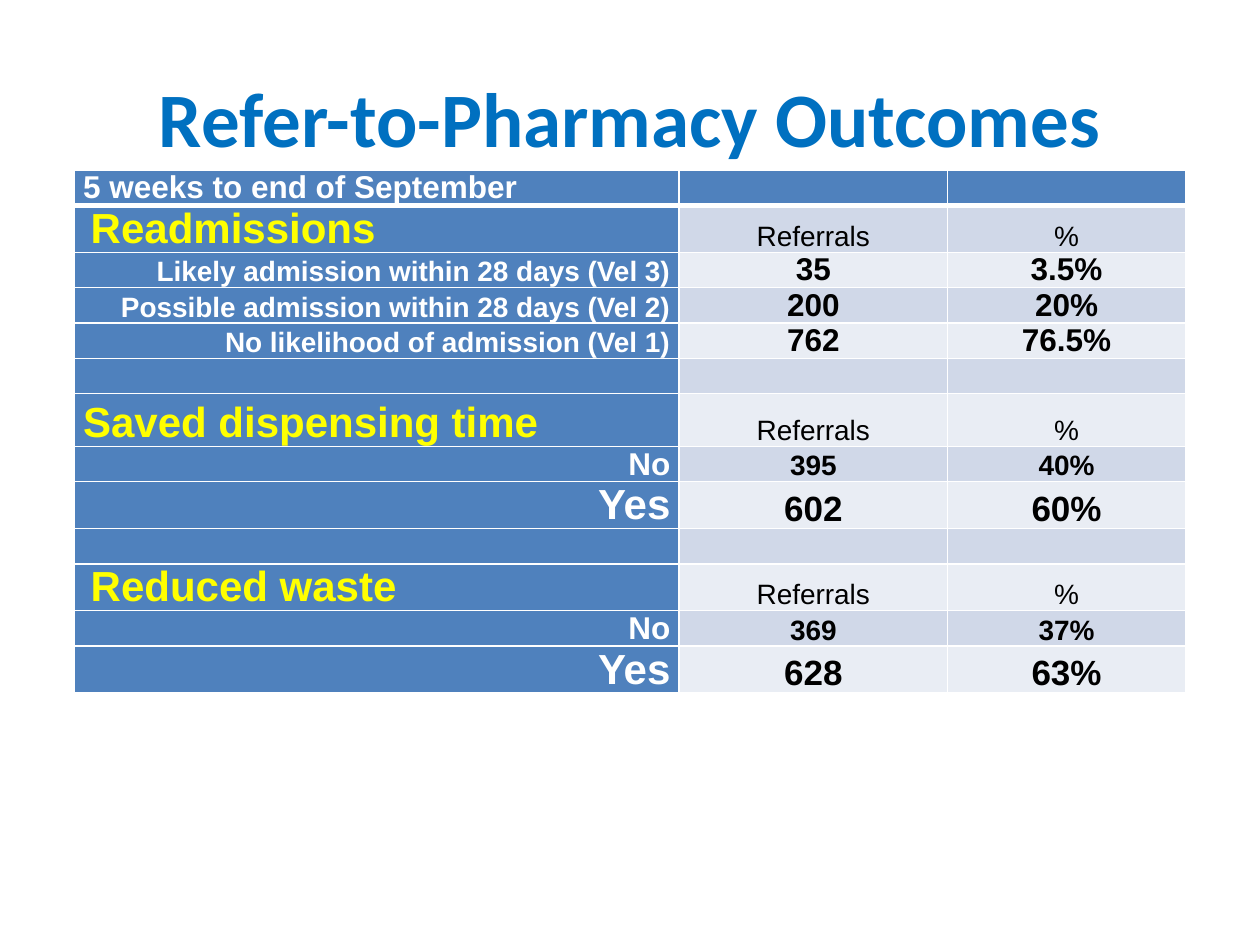
import lxml.etree
import pptx
import pptx.util
import pptx.dml.color
import pptx.enum.text
import pptx.oxml.ns

Inches = pptx.util.Inches
Pt = pptx.util.Pt
RGBColor = pptx.dml.color.RGBColor
ALIGN = pptx.enum.text.PP_ALIGN
ANCHOR = pptx.enum.text.MSO_ANCHOR
qn = pptx.oxml.ns.qn

TITLE_BLUE = RGBColor(0x00, 0x70, 0xC0)
HEADER_BLUE = RGBColor(0x4F, 0x81, 0xBD)
BAND_DARK = RGBColor(0xD0, 0xD8, 0xE8)
BAND_LIGHT = RGBColor(0xE9, 0xED, 0xF4)
YELLOW = RGBColor(0xFF, 0xFF, 0x00)
WHITE = RGBColor(0xFF, 0xFF, 0xFF)
BLACK = RGBColor(0x00, 0x00, 0x00)

COLUMN_WIDTHS = [4.8, 2.13, 1.89]
ROW_HEIGHT = 0.28
TALL_ROW_HEIGHT = 0.42
SIDE_MARGIN = 0.07
HEADING_INDENT = 0.13

STYLES = {
    "period": (18, WHITE, ALIGN.LEFT, 18, True),
    "heading": (24, YELLOW, ALIGN.LEFT, 16, False),
    "risk": (16, WHITE, ALIGN.RIGHT, 18, True),
    "no": (18, WHITE, ALIGN.RIGHT, 16, True),
    "yes": (24, WHITE, ALIGN.RIGHT, 20, True),
    "gap": (16, WHITE, ALIGN.LEFT, 16, False),
}
ROWS = [
    ("period", "5 weeks to end of September", "", ""),
    ("heading", "Readmissions", "Referrals", "%"),
    ("risk", "Likely admission within 28 days (Vel 3)", "35", "3.5%"),
    ("risk", "Possible admission within 28 days (Vel 2)", "200", "20%"),
    ("risk", "No likelihood of admission (Vel 1)", "762", "76.5%"),
    ("gap", "", "", ""),
    ("heading", "Saved dispensing time", "Referrals", "%"),
    ("no", "No", "395", "40%"),
    ("yes", "Yes", "602", "60%"),
    ("gap", "", "", ""),
    ("heading", "Reduced waste", "Referrals", "%"),
    ("no", "No", "369", "37%"),
    ("yes", "Yes", "628", "63%"),
]
INDENTED_HEADINGS = ("Readmissions", "Reduced waste")
TALL_HEADING = "Saved dispensing time"

deck = pptx.Presentation()
deck.slide_width = Inches(10)
deck.slide_height = Inches(7.5)
page = deck.slides.add_slide(deck.slide_layouts[5])

title = page.shapes.title
title.left, title.top = Inches(0.5), Inches(0.3)
title.width, title.height = Inches(9), Inches(1.25)
title.text_frame.text = "Refer-to-Pharmacy Outcomes"
title.text_frame.vertical_anchor = ANCHOR.MIDDLE
para = title.text_frame.paragraphs[0]
para.alignment = ALIGN.CENTER
para.font.name = "Calibri"
para.font.size = Pt(44)
para.font.bold = True
para.font.color.rgb = TITLE_BLUE

frame = page.shapes.add_table(
    len(ROWS), len(COLUMN_WIDTHS), Inches(0.59), Inches(1.35),
    Inches(sum(COLUMN_WIDTHS)), Inches(ROW_HEIGHT * len(ROWS)))
table = frame.table
table.first_col = True
for column, width in zip(table.columns, COLUMN_WIDTHS):
    column.width = Inches(width)

for row_index, (kind, *texts) in enumerate(ROWS):
    label_size, label_color, label_align, value_size, value_bold = STYLES[kind]
    tall = texts[0] == TALL_HEADING
    table.rows[row_index].height = Inches(TALL_ROW_HEIGHT if tall else ROW_HEIGHT)
    for column_index, text in enumerate(texts):
        is_label = column_index == 0
        cell = table.cell(row_index, column_index)
        cell.text = text
        cell.vertical_anchor = ANCHOR.BOTTOM
        indented = text in INDENTED_HEADINGS
        cell.margin_left = Inches(HEADING_INDENT if indented else SIDE_MARGIN)
        cell.margin_right = Inches(SIDE_MARGIN)
        cell.margin_top = cell.margin_bottom = 0
        cell.fill.solid()
        if is_label or row_index == 0:
            cell.fill.fore_color.rgb = HEADER_BLUE
        else:
            cell.fill.fore_color.rgb = BAND_DARK if row_index % 2 else BAND_LIGHT
        para = cell.text_frame.paragraphs[0]
        para.alignment = label_align if is_label else ALIGN.CENTER
        para.font.name = "Arial"
        para.font.size = Pt(label_size if is_label else value_size)
        para.font.bold = is_label or value_bold
        para.font.color.rgb = label_color if is_label else BLACK

for cell in table.rows[0].cells:
    border = lxml.etree.Element(qn("a:lnB"), w=str(Pt(3)))
    line_fill = lxml.etree.SubElement(border, qn("a:solidFill"))
    lxml.etree.SubElement(line_fill, qn("a:srgbClr"), val=str(WHITE))
    cell._tc.get_or_add_tcPr().insert(0, border)

deck.save("out.pptx")
